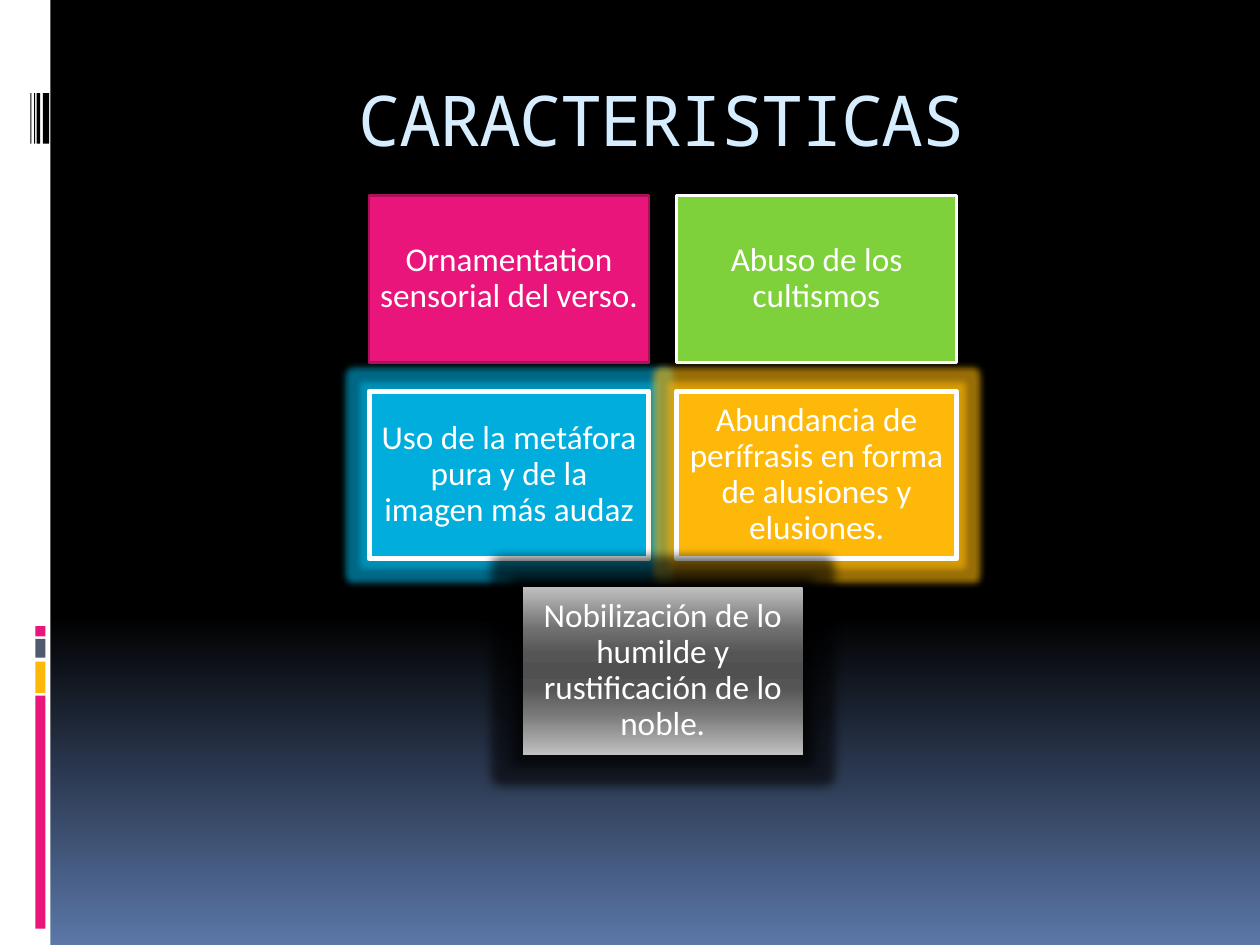
from lxml.etree import SubElement
from pptx import Presentation
from pptx.dml.color import RGBColor
from pptx.enum.shapes import MSO_SHAPE
from pptx.enum.text import MSO_ANCHOR, PP_ALIGN
from pptx.oxml.ns import qn
from pptx.util import Inches, Pt

WHITE = RGBColor(0xFF, 0xFF, 0xFF)
BLACK = RGBColor(0, 0, 0)
PINK = RGBColor(0xEA, 0x15, 0x7A)
WINE = RGBColor(0xAD, 0x10, 0x5A)
GREEN = RGBColor(0x7F, 0xD1, 0x3B)
BLUE = RGBColor(0x00, 0xAD, 0xDC)
GOLD = RGBColor(0xFE, 0xB8, 0x0A)
SLATE = RGBColor(0x4E, 0x5B, 0x6F)
PALE = RGBColor(0xD6, 0xEC, 0xFF)
DUSK = RGBColor(0x5B, 0x77, 0xA8)
SILVER = RGBColor(0xC0, 0xC0, 0xC0)
GRAY = RGBColor(0x70, 0x70, 0x70)
DARK = RGBColor(0x55, 0x55, 0x55)
CORE = RGBColor(0x50, 0x50, 0x50)
ASH = RGBColor(0x76, 0x76, 0x76)

SKY = [(0, BLACK), (65, BLACK), (100, DUSK)]
STEEL = [(0, SILVER), (25, GRAY), (40, DARK), (50, CORE),
         (60, DARK), (75, ASH), (100, SILVER)]


class Deck:
    head = "Noto Sans Mono"
    body = "Calibri"

    def __init__(self):
        self.prs = Presentation()
        self.prs.slide_width, self.prs.slide_height = Inches(10), Inches(7.5)
        self.slide = self.prs.slides.add_slide(self.prs.slide_layouts[5])

    def blend(self, fill, root, stops):
        """Fill from top to bottom with any number of colour stops."""
        fill.gradient()
        fill.gradient_angle = 270
        items = root.find(".//" + qn("a:gsLst"))
        for old in list(items):
            items.remove(old)
        for pos, color in stops:
            stop = SubElement(items, qn("a:gs"), pos=str(pos * 1000))
            SubElement(stop, qn("a:srgbClr"), val=str(color))

    def back(self, stops):
        self.blend(self.slide.background.fill, self.slide.element, stops)

    def title(self, text):
        box = self.slide.shapes.title
        box.left, box.top = Inches(1), Inches(0.56)
        box.width, box.height = Inches(8.5), Inches(1)
        frame = box.text_frame
        frame.text = text
        frame.vertical_anchor = MSO_ANCHOR.TOP
        para = frame.paragraphs[0]
        para.alignment = PP_ALIGN.CENTER
        para.font.name, para.font.size = self.head, Pt(40)
        para.font.color.rgb = PALE
        para.runs[0].font._element.set("spc", "-100")

    def rect(self, x, y, w, h, fill):
        shape = self.slide.shapes.add_shape(
            MSO_SHAPE.RECTANGLE, Inches(x), Inches(y), Inches(w), Inches(h))
        shape.shadow.inherit = False
        shape.line.fill.background()
        if isinstance(fill, list):
            self.blend(shape.fill, shape.element, fill)
        else:
            shape.fill.solid()
            shape.fill.fore_color.rgb = fill
        return shape

    def glow(self, shape, color, size):
        effects = shape.element.spPr.find(qn("a:effectLst"))
        glow = SubElement(effects, qn("a:glow"), rad=str(Pt(size)))
        tint = SubElement(glow, qn("a:srgbClr"), val=str(color))
        SubElement(tint, qn("a:alpha"), val="60000")

    def card(self, x, y, text, fill, line=None, width=0, glow=None, size=0):
        shape = self.rect(x, y, 2.22, 1.33, fill)
        if line is not None:
            shape.line.color.rgb = line
            shape.line.width = Pt(width)
        if glow is not None:
            self.glow(shape, glow, size)
        frame = shape.text_frame
        frame.word_wrap = True
        frame.vertical_anchor = MSO_ANCHOR.MIDDLE
        frame.margin_left = frame.margin_right = Inches(0.08)
        frame.margin_top = frame.margin_bottom = Inches(0.08)
        frame.text = text
        para = frame.paragraphs[0]
        para.alignment = PP_ALIGN.CENTER
        para.line_spacing = 0.9
        para.font.name, para.font.size = self.body, Pt(19)
        para.font.color.rgb = WHITE


def main():
    deck = Deck()
    deck.back(SKY)
    deck.rect(0, 0, 0.4, 7.5, WHITE)
    for y, h, color in [(5.52, 1.85, PINK), (5.25, 0.25, GOLD),
                        (5.07, 0.15, SLATE), (4.97, 0.08, PINK)]:
        deck.rect(0.28, y, 0.08, h, color)
    for x, w in [(0.34, 0.05), (0.29, 0.03), (0.27, 0.01), (0.24, 0.01)]:
        deck.rect(x, 0.74, w, 0.4, BLACK)
    deck.title("CARACTERISTICAS")

    cards = [
        ("Ornamentation sensorial del verso.", PINK, WINE, 1.5),
        ("Abuso de los cultismos", GREEN, WHITE, 1.5),
        ("Uso de la metáfora pura y de la imagen más audaz",
         BLUE, WHITE, 3, BLUE, 8),
        ("Abundancia de perífrasis en forma de alusiones y elusiones.",
         GOLD, WHITE, 3, GOLD, 8),
        ("Nobilización de lo humilde y rustificación de lo noble.",
         STEEL, None, 0, BLACK, 12),
    ]
    left, top, across, down = 2.93, 1.55, 2.44, 1.555
    for i, card in enumerate(cards):
        row, col = divmod(i, 2)
        if i == len(cards) - 1:
            col = 0.5  # the odd card sits centred
        deck.card(left + col * across, top + row * down, *card)
    deck.prs.save("out.pptx")


if __name__ == "__main__":
    main()
